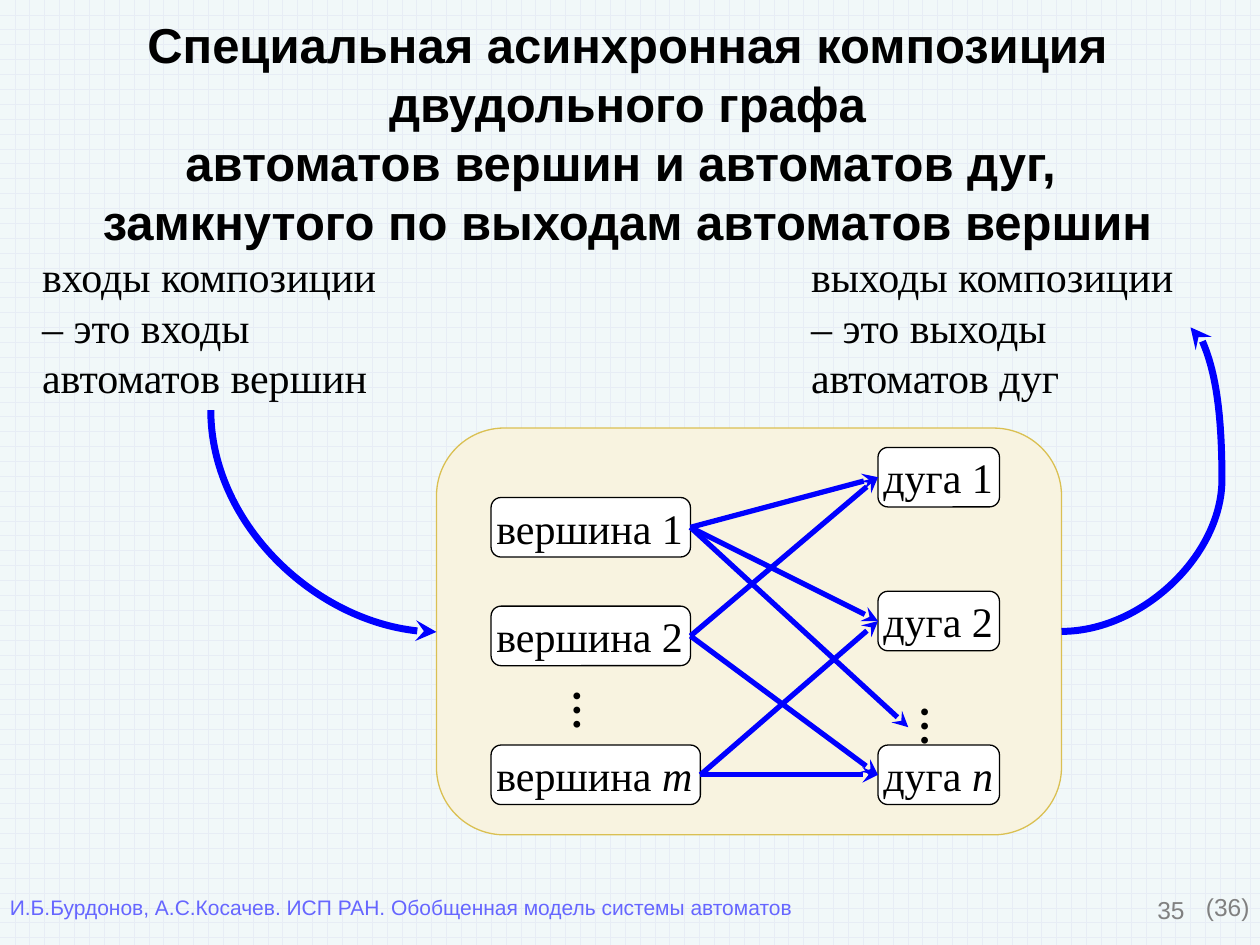
from dataclasses import dataclass
from typing import NamedTuple

from lxml import etree
from pptx import Presentation
from pptx.dml.color import RGBColor
from pptx.enum import dml, shapes, text
from pptx.oxml.ns import qn
from pptx.util import Cm, Pt


@dataclass(frozen=True)
class Theme:
    sans: str = "Arial"
    serif: str = "Times New Roman"
    title_size: int = 28
    body_size: int = 24
    page_size: int = 14
    footer_size: int = 12
    edge_width: float = 3
    flow_width: float = 4
    outline_width: float = 0.75
    ink: str = "000000"
    white: str = "FFFFFF"
    gray: str = "808080"
    footer: str = "6666FF"
    arrow: str = "0000FF"
    frame_fill: str = "F8F3E0"
    frame_line: str = "DAC052"
    paper: str = "F1F8F9"
    grid: str = "E7EDF5"


class Box(NamedTuple):
    """Left, top, width and height in centimetres."""
    left: float
    top: float
    width: float
    height: float

    def lengths(self) -> list:
        return [Cm(value) for value in self]


class Style(NamedTuple):
    font: str
    size: int
    color: str
    bold: bool = False


class Node(NamedTuple):
    word: str
    index: str
    box: Box
    anchor: text.MSO_ANCHOR


THEME = Theme()
BODY = Style(THEME.serif, THEME.body_size, THEME.ink)
LEFT, RIGHT = 1, 3
TOP, MIDDLE = text.MSO_ANCHOR.TOP, text.MSO_ANCHOR.MIDDLE


def rgb(color: str) -> RGBColor:
    return RGBColor.from_string(color)


def add_run(paragraph, words: str, style: Style, italic: bool = False) -> None:
    run = paragraph.add_run()
    run.text = words
    font = run.font
    font.name, font.size, font.bold = style.font, Pt(style.size), style.bold
    font.italic = italic
    font.color.rgb = rgb(style.color)


def set_frame(frame, insets: tuple, wrap: bool, anchor=TOP) -> None:
    frame.margin_left = frame.margin_right = Cm(insets[0])
    frame.margin_top = frame.margin_bottom = Cm(insets[1])
    frame.word_wrap = wrap
    frame.auto_size = text.MSO_AUTO_SIZE.SHAPE_TO_FIT_TEXT
    frame.vertical_anchor = anchor


def add_text(slide, box: Box, lines: list, style: Style, insets=(0.25, 0.13),
             align=text.PP_ALIGN.LEFT, wrap=False, anchor=TOP) -> None:
    frame = slide.shapes.add_textbox(*box.lengths()).text_frame
    set_frame(frame, insets, wrap, anchor)
    for number, line in enumerate(lines):
        paragraph = frame.add_paragraph() if number else frame.paragraphs[0]
        paragraph.alignment = align
        add_run(paragraph, line, style)


def add_rounded(slide, box: Box, fill: str = "", line: str = ""):
    shape = slide.shapes.add_shape(shapes.MSO_SHAPE.ROUNDED_RECTANGLE, *box.lengths())
    shape.shadow.inherit = False
    for part, color in ((shape.fill, fill), (shape.line.fill, line)):
        if color:
            part.solid()
            part.fore_color.rgb = rgb(color)
        else:
            part.background()
    if line:
        shape.line.width = Pt(THEME.outline_width)
    return shape


def add_label(shape, word: str, index: str, style: Style, anchor) -> None:
    set_frame(shape.text_frame, (0.05, 0.03), False, anchor)
    paragraph = shape.text_frame.paragraphs[0]
    paragraph.alignment = text.PP_ALIGN.LEFT
    add_run(paragraph, word, style)
    if index:
        add_run(paragraph, index, style, italic=index.isalpha())


def add_node(slide, node: Node):
    shape = add_rounded(slide, node.box, THEME.white, THEME.ink)
    add_label(shape, node.word, node.index, BODY, node.anchor)
    return shape


def add_dots(slide, box: Box):
    shape = add_rounded(slide, box)
    add_label(shape, "…", "", BODY._replace(bold=True), TOP)
    shape.text_frame._txBody.bodyPr.set("vert", "vert")
    return shape


def add_arrow(slide, kind, ends: tuple, width: float):
    arrow = slide.shapes.add_connector(kind, *(Cm(value) for value in ends))
    arrow.line.color.rgb = rgb(THEME.arrow)
    arrow.line.width = Pt(width)
    etree.SubElement(arrow.line._get_or_add_ln(), qn("a:tailEnd"), type="stealth")
    etree.SubElement(arrow._element.spPr, qn("a:effectLst"))
    return arrow


def add_edge(slide, source, target) -> None:
    edge = add_arrow(slide, shapes.MSO_CONNECTOR.STRAIGHT, (0, 0, 1, 1), THEME.edge_width)
    edge.begin_connect(source, RIGHT)
    edge.end_connect(target, LEFT)


def main() -> None:
    deck = Presentation()
    deck.slide_width, deck.slide_height = Cm(25.4), Cm(19.05)
    slide = deck.slides.add_slide(deck.slide_layouts[6])

    # Squared paper
    paper = slide.background.fill
    paper.patterned()
    paper.pattern = dml.MSO_PATTERN.HORIZONTAL_BRICK
    paper.fore_color.rgb, paper.back_color.rgb = rgb(THEME.grid), rgb(THEME.paper)

    # Composition frame
    add_rounded(slide, Box(8.8, 8.63, 12.6, 8.2), THEME.frame_fill, THEME.frame_line)

    # Footer and page count
    page = Style(THEME.sans, THEME.page_size, THEME.gray)
    add_text(slide, Box(18.21, 17.91, 5.92, 1.32), ["35"], page,
             align=text.PP_ALIGN.RIGHT, wrap=True)
    add_text(slide, Box(24.31, 17.98, 0.89, 0.58), ["(36)"], page, insets=(0, 0))
    add_text(slide, Box(0.2, 18.03, 15.93, 0.51),
             ["И.Б.Бурдонов, А.С.Косачев. ИСП РАН. Обобщенная модель системы автоматов"],
             Style(THEME.sans, THEME.footer_size, THEME.footer), insets=(0, 0))

    # Title
    add_text(slide, Box(0.5, 0.03, 24.3, 5.28),
             ["Специальная асинхронная композиция двудольного графа",
              "автоматов вершин и автоматов дуг, ",
              "замкнутого по выходам автоматов вершин"],
             Style(THEME.sans, THEME.title_size, THEME.ink, True), insets=(0.25, 0.25),
             align=text.PP_ALIGN.CENTER, wrap=True, anchor=MIDDLE)

    # Inputs and outputs
    add_text(slide, Box(0.6, 4.93, 7.32, 3.33),
             ["входы композиции", "– это входы", "автоматов вершин"], BODY)
    add_text(slide, Box(16.1, 4.93, 7.9, 3.33),
             ["выходы композиции", "– это выходы", "автоматов дуг"], BODY)

    # Vertex and arc automata
    vertices = {index: add_node(slide, Node("вершина ", index, Box(9.9, top, width, 1.2), MIDDLE))
                for index, top, width in (("1", 10.03, 4.02), ("2", 12.22, 4.02), ("m", 15.02, 4.22))}
    arcs = {index: add_node(slide, Node("дуга ", index, Box(17.7, top, 2.45, 1.2), TOP))
            for index, top in (("1", 9.02), ("2", 11.92), ("n", 15.02))}
    add_dots(slide, Box(11.3, 13.82, 1.22, 1.02))
    arcs["…"] = add_dots(slide, Box(18.31, 14.15, 1.22, 1.02))

    # Edges of the bipartite graph
    for source, targets in (("1", "12…"), ("2", "1n"), ("m", "n2")):
        for target in targets:
            add_edge(slide, vertices[source], arcs[target])

    # Flow into the composition: a quarter bend, down and then right
    inflow = add_arrow(slide, shapes.MSO_CONNECTOR.CURVE, (8.76, 8.23, 4.29, 12.78),
                       THEME.flow_width)
    inflow._element.spPr.prstGeom.set("prst", "curvedConnector2")
    inflow._element.spPr.find(qn("a:xfrm")).set("rot", str(270 * 60000))

    # Flow out of the composition: bulges past its end point
    outflow = add_arrow(slide, shapes.MSO_CONNECTOR.CURVE, (21.4, 12.73, 24, 6.6),
                        THEME.flow_width)
    bulge = outflow._element.spPr.prstGeom.get_or_add_avLst()
    etree.SubElement(bulge, qn("a:gd"), name="adj1", fmla="val 124400")

    deck.save("out.pptx")


if __name__ == "__main__":
    main()
